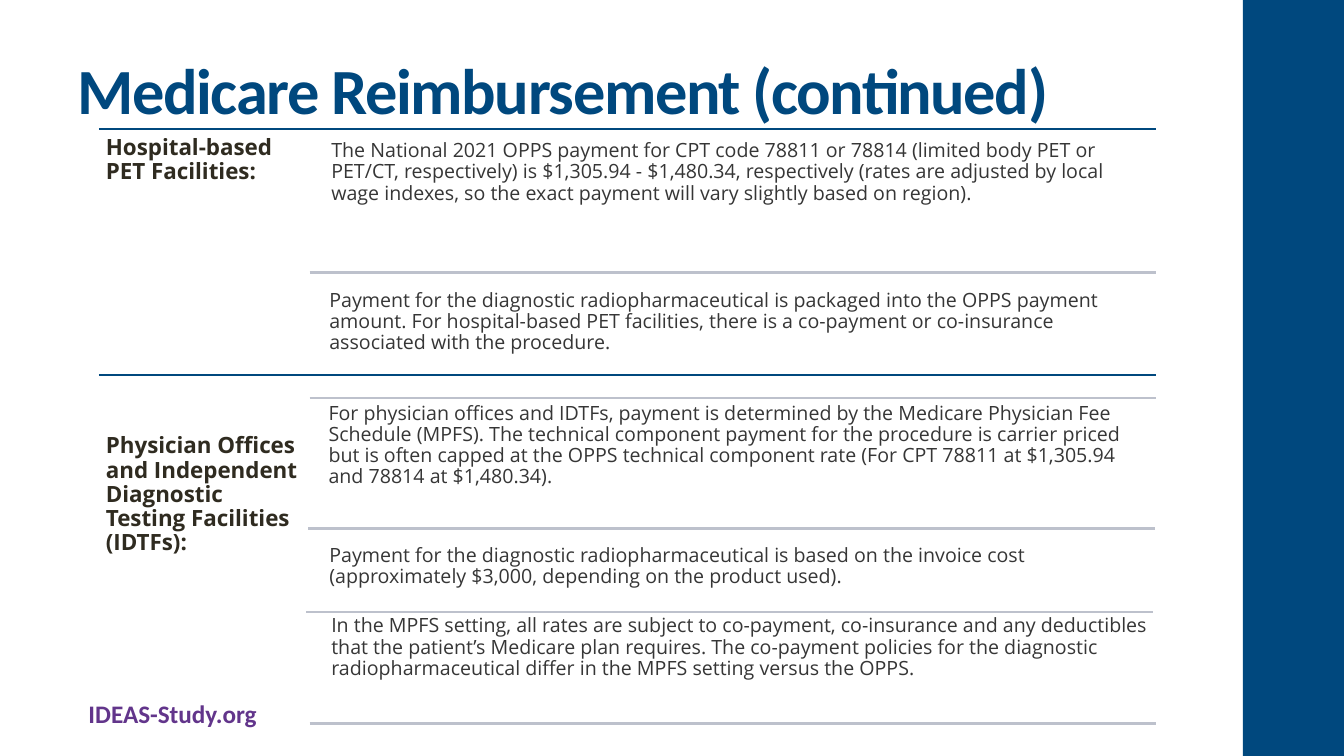
from dataclasses import dataclass

from lxml.etree import SubElement
from pptx import Presentation
from pptx.dml.color import RGBColor
from pptx.enum.shapes import MSO_CONNECTOR, MSO_SHAPE
from pptx.enum.text import MSO_ANCHOR, MSO_AUTO_SIZE, PP_ALIGN
from pptx.oxml.ns import qn
from pptx.util import Cm, Pt


@dataclass(frozen=True)
class Theme:
    blue: str = "00487E"
    purple: str = "62358B"
    grey: str = "BDC1CC"
    dark: str = "2F2B20"
    text: str = "363636"
    head: str = "Calibri"
    body: str = "Open Sans"
    title_size: int = 46
    site_size: int = 18
    label_size: int = 16
    body_size: int = 14
    rule: int = 2


class Deck:
    def __init__(self, theme):
        self.theme = theme
        self.prs = Presentation()
        self.prs.slide_width, self.prs.slide_height = Cm(33.87), Cm(19.05)
        self.slide = self.prs.slides.add_slide(self.prs.slide_layouts[5])

    def style(self, para, size, color, name, bold):
        for run in para.runs:
            font = run.font
            font.size, font.name, font.bold = Pt(size), name, bold
            font.color.rgb = RGBColor.from_string(color)

    def title(self, text, x, y, w, h):
        t = self.theme
        box = self.slide.shapes.title
        box.left, box.top, box.width, box.height = Cm(x), Cm(y), Cm(w), Cm(h)
        frame = box.text_frame
        frame.text = text
        frame.auto_size = MSO_AUTO_SIZE.NONE
        frame.vertical_anchor = MSO_ANCHOR.MIDDLE
        para = frame.paragraphs[0]
        para.alignment = PP_ALIGN.LEFT
        para.line_spacing = 0.9
        self.style(para, t.title_size, t.blue, t.head, True)
        # Tighten the letters by one point
        para.runs[0].font._element.set("spc", "-100")

    def bar(self, x, y, w, h):
        bar = self.slide.shapes.add_shape(
            MSO_SHAPE.RECTANGLE, Cm(x), Cm(y), Cm(w), Cm(h))
        bar.shadow.inherit = False
        bar.fill.solid()
        bar.fill.fore_color.rgb = RGBColor.from_string(self.theme.blue)
        bar.line.fill.background()

    def rule(self, x, y, w, color):
        line = self.slide.shapes.add_connector(
            MSO_CONNECTOR.STRAIGHT, Cm(x), Cm(y), Cm(x + w), Cm(y))
        line.line.color.rgb = RGBColor.from_string(color)
        line.line.width = Pt(self.theme.rule)
        SubElement(line._element.spPr, qn("a:effectLst"))

    def text(self, text, x, y, w, h, size, color, name,
             bold=False, inset=None, wrap=True):
        box = self.slide.shapes.add_textbox(Cm(x), Cm(y), Cm(w), Cm(h))
        frame = box.text_frame
        frame.text = text
        frame.word_wrap = wrap
        para = frame.paragraphs[0]
        if inset is not None:
            frame.margin_left = frame.margin_right = Cm(inset)
            frame.margin_top = frame.margin_bottom = Cm(inset)
            para.line_spacing = 0.9
        self.style(para, size, color, name, bold)

    def label(self, text, x, y, w, h):
        t = self.theme
        self.text(text, x, y, w, h, t.label_size, t.dark, t.body, True, 0.18)

    def note(self, text, x, y, w, h):
        t = self.theme
        self.text(text, x, y, w, h, t.body_size, t.text, t.body, inset=0.15)

    def site(self, text, x, y, w, h):
        t = self.theme
        self.text(text, x, y, w, h, t.site_size, t.purple, t.head, True,
                  wrap=False)


LEFT = 2.49
LABELS = [
    ("Hospital-based PET Facilities:", 3.25),
    ("Physician Offices and Independent Diagnostic Testing Facilities "
     "(IDTFs):", 10.77),
]
# Text, left, top, height
NOTES = [
    ("The National 2021 OPPS payment for CPT code 78811 or 78814 (limited "
     "body PET or PET/CT, respectively) is $1,305.94 - $1,480.34, "
     "respectively (rates are adjusted by local wage indexes, so the exact "
     "payment will vary slightly based on region).", 8.2, 3.4, 3.07),
    ("Payment for the diagnostic radiopharmaceutical is packaged into the "
     "OPPS payment amount. For hospital-based PET facilities, there is a "
     "co-payment or co-insurance associated with the procedure.",
     8.15, 7.16, 4.01),
    ("For physician offices and IDTFs, payment is determined by the Medicare "
     "Physician Fee Schedule (MPFS). The technical component payment for the "
     "procedure is carrier priced but is often capped at the OPPS technical "
     "component rate (For CPT 78811 at $1,305.94 and 78814 at $1,480.34).",
     8.13, 10.01, 4.6),
    ("Payment for the diagnostic radiopharmaceutical is based on the invoice "
     "cost (approximately $3,000, depending on the product used).",
     8.15, 13.59, 0.94),
    ("In the MPFS setting, all rates are subject to co-payment, co-insurance "
     "and any deductibles that the patient’s Medicare plan requires. The "
     "co-payment policies for the diagnostic radiopharmaceutical differ in "
     "the MPFS setting versus the OPPS.", 8.2, 15.37, 1.85),
]
# Left and height of each thin rule
RULES = [(7.8, 6.86), (7.8, 10.03), (7.77, 13.31), (7.72, 15.42), (7.8, 18.24)]


def main():
    theme = Theme()
    deck = Deck(theme)

    # Frame of the slide
    deck.bar(31.32, 0, 2.55, 19.05)
    deck.site("IDEAS-Study.org", 1.98, 17.48, 4.78, 1.02)
    deck.title("Medicare Reimbursement (continued)", 1.7, 0.76, 28.22, 3.18)

    # Rules between sections and rows
    for y in (3.25, 9.45):
        deck.rule(LEFT, y, 26.64, theme.blue)
    for x, y in RULES:
        deck.rule(x, y, 21.33, theme.grey)

    # Section labels and their notes
    for text, y in LABELS:
        deck.label(text, LEFT, y, 5.33, 7.52)
    for text, x, y, h in NOTES:
        deck.note(text, x, y, 20.93, h)

    deck.prs.save("out.pptx")


if __name__ == "__main__":
    main()
